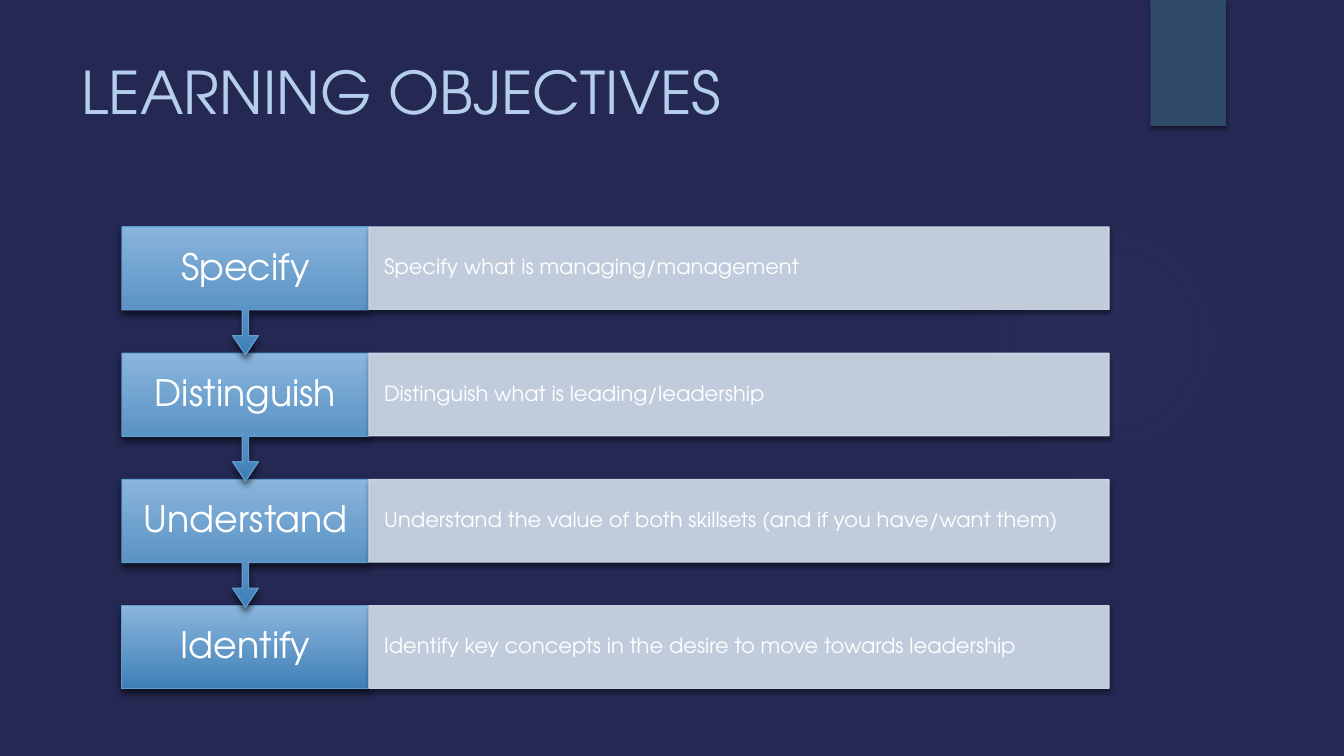
"""Build the Learning Objectives slide: four linked steps with descriptions."""
from lxml.etree import SubElement
from pptx import Presentation
from pptx.dml.color import RGBColor
from pptx.enum.shapes import MSO_SHAPE as Shape
from pptx.enum.text import MSO_ANCHOR as Anchor, MSO_AUTO_SIZE as AutoSize, PP_ALIGN as Align
from pptx.oxml.ns import qn
from pptx.util import Inches, Pt

TITLE = "LEARNING OBJECTIVES"
STEPS = [
    ("Specify", "Specify what is managing/management"),
    ("Distinguish", "Distinguish what is leading/leadership"),
    ("Understand", "Understand the value of both skillsets (and if you have/want them)"),
    ("Identify", "Identify key concepts in the desire to move towards leadership"),
]
FONT = "TeX Gyre Adventor"
COLORS = {
    "background": "242852", "glow": "5C64B7", "tab": "2F4A68", "title": "B4CEEB",
    "step_top": "8AB5DC", "step_bottom": "3F7FB7", "step_line": "629DD1",
    "panel": "D3DFEE", "text": "FFFFFF", "shadow": "000000",
}
GLOW_STOPS = [(0, 7), (36, 6), (69, 0)]
SOFT_SHADOW = (45, 3, 2)
DEEP_SHADOW = (60, 5, 3)
LEFT, TOP, PITCH = 1.21, 2.25, 1.253
STEP_WIDTH, PANEL_WIDTH = 2.45, 7.34
ROW_HEIGHT, CALLOUT_HEIGHT = 0.82, 1.27
CALLOUT_SHARES = (0.05, 0.1, 0.15, 0.65)


def color(name):
    return RGBColor.from_string(COLORS[name])


def set_alpha(fill_parent, percent):
    tint = fill_parent.find(qn("a:solidFill"))[0]
    SubElement(tint, qn("a:alpha"), val=str(percent * 1000))


def add_box(page, kind, left, top, width, height):
    box = page.shapes.add_shape(kind, *map(Inches, (left, top, width, height)))
    box.shadow.inherit = False
    box.line.fill.background()
    return box


def add_shadow(box, opacity, blur, distance):
    effects = box._element.spPr.find(qn("a:effectLst"))
    shadow = SubElement(effects, qn("a:outerShdw"), blurRad=str(Pt(blur)),
                        dist=str(Pt(distance)), dir="5400000", algn="ctr", rotWithShape="0")
    tint = SubElement(shadow, qn("a:srgbClr"), val=COLORS["shadow"])
    SubElement(tint, qn("a:alpha"), val=str(opacity * 1000))


def write(box, text, size, tint, align, anchor, inset_x, inset_y):
    frame = box.text_frame
    frame.text = text
    frame.word_wrap = True
    frame.auto_size = AutoSize.NONE
    frame.vertical_anchor = anchor
    frame.margin_left = frame.margin_right = Inches(inset_x)
    frame.margin_top = frame.margin_bottom = Inches(inset_y)
    para = frame.paragraphs[0]
    para.alignment = align
    para.font.name, para.font.size = FONT, Pt(size)
    para.font.color.rgb = color(tint)
    return para


def add_glow(page):
    glow = add_box(page, Shape.OVAL, 9.41, 1.83, 3.08, 3.08)
    glow.fill.gradient()
    gradient = glow._element.spPr.find(qn("a:gradFill"))
    for child in list(gradient):
        gradient.remove(child)
    stops = SubElement(gradient, qn("a:gsLst"))
    for position, opacity in GLOW_STOPS:
        stop = SubElement(stops, qn("a:gs"), pos=str(position * 1000))
        tint = SubElement(stop, qn("a:srgbClr"), val=COLORS["glow"])
        SubElement(tint, qn("a:alpha"), val=str(opacity * 1000))
    circle = SubElement(gradient, qn("a:path"), path="circle")
    SubElement(circle, qn("a:fillToRect"), l="50000", t="50000", r="50000", b="50000")


def add_step(page, row, label, is_last):
    kind = Shape.RECTANGLE if is_last else Shape.DOWN_ARROW_CALLOUT
    height = ROW_HEIGHT if is_last else CALLOUT_HEIGHT
    step = add_box(page, kind, LEFT, TOP + row * PITCH, STEP_WIDTH, height)
    if not is_last:
        for index, share in enumerate(CALLOUT_SHARES):
            step.adjustments[index] = share
    step.fill.gradient()
    step.fill.gradient_angle = 270
    for stop, name in zip(step.fill.gradient_stops, ("step_top", "step_bottom")):
        stop.color.rgb = color(name)
    step.line.color.rgb = color("step_line")
    step.line.width = Pt(0.75)
    add_shadow(step, *DEEP_SHADOW)
    write(step, label, 26, "text", Align.CENTER, Anchor.MIDDLE, 0.17, 0.2).line_spacing = 0.9


def add_panel(page, row, description):
    panel = add_box(page, Shape.RECTANGLE, LEFT + STEP_WIDTH, TOP + row * PITCH,
                    PANEL_WIDTH, ROW_HEIGHT)
    panel.fill.solid()
    panel.fill.fore_color.rgb = color("panel")
    panel.line.color.rgb = color("panel")
    panel.line.width = Pt(0.75)
    properties = panel._element.spPr
    for parent in (properties, properties.find(qn("a:ln"))):
        set_alpha(parent, 90)
    add_shadow(panel, *SOFT_SHADOW)
    write(panel, description, 15, "text", Align.LEFT, Anchor.MIDDLE, 0.15, 0.21).line_spacing = 0.9


def main():
    deck = Presentation()
    deck.slide_width, deck.slide_height = Inches(13.33), Inches(7.5)
    page = deck.slides.add_slide(deck.slide_layouts[5])
    page.background.fill.solid()
    page.background.fill.fore_color.rgb = color("background")

    add_glow(page)
    tab = add_box(page, Shape.RECTANGLE, 11.41, 0, 0.75, 1.25)
    tab.fill.solid()
    tab.fill.fore_color.rgb = color("tab")
    add_shadow(tab, *SOFT_SHADOW)

    title = page.shapes.title
    title.left, title.top, title.width, title.height = map(Inches, (0.71, 0.5, 10.29, 1.53))
    write(title, TITLE, 42, "title", Align.LEFT, Anchor.TOP, 0.1, 0.05)

    last = len(STEPS) - 1
    for row, (label, description) in reversed(list(enumerate(STEPS))):
        add_step(page, row, label, row == last)
        add_panel(page, row, description)
    deck.save("out.pptx")


if __name__ == "__main__":
    main()
